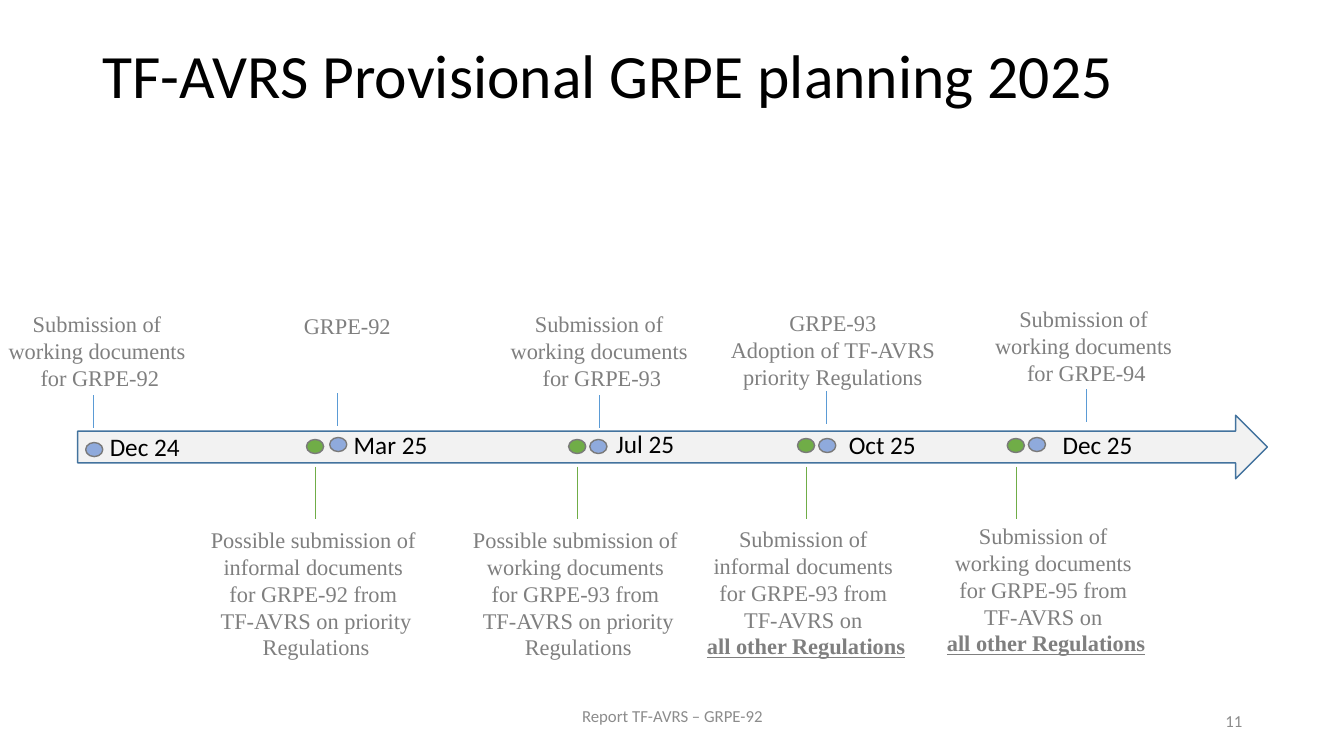
from typing import NamedTuple

from lxml.etree import SubElement
from pptx import Presentation
from pptx.dml.color import RGBColor
from pptx.enum.shapes import MSO_CONNECTOR, MSO_SHAPE as SHAPE
from pptx.enum.text import MSO_ANCHOR as ANCHOR, MSO_AUTO_SIZE as AUTO, PP_ALIGN as ALIGN
from pptx.oxml.ns import qn
from pptx.util import Pt

PX = 9144  # 100 px to the inch

BLACK = RGBColor(0x00, 0x00, 0x00)
TEXT_GREY = RGBColor(0x7F, 0x7F, 0x7F)
FOOTER_GREY = RGBColor(0x8C, 0x8C, 0x8C)
ARROW_FILL = RGBColor(0xF2, 0xF2, 0xF2)
ARROW_EDGE = RGBColor(0x43, 0x73, 0x9E)
DOT_EDGE = RGBColor(0x7A, 0x7A, 0x7A)
SESSION_DOT = RGBColor(0x8F, 0xAA, 0xDC)
SESSION_STEM = RGBColor(0x5B, 0x9B, 0xD5)
TASK_FORCE_GREEN = RGBColor(0x70, 0xAD, 0x47)

TITLE_FONT = {"name": "Calibri", "size": Pt(44)}
DATE_FONT = {"name": "Calibri", "size": Pt(18)}
NOTE_FONT = {"name": "Times New Roman", "size": Pt(16)}
FOOTER_FONT = {"name": "Calibri", "size": Pt(12)}
EMPHASIS = {"bold": True, "underline": True}

DOT_WIDTH, DOT_HEIGHT = 17, 14
SESSION_STEM_LENGTH = 33
TASK_STEM_TOP, TASK_STEM_BOTTOM = 463, 515
ALL_OTHER = "all other Regulations"


class Event(NamedTuple):
    dot: tuple  # left, top
    stem: tuple  # x, top
    note_box: tuple
    note: list
    date_box: tuple
    date: str


class Submission(NamedTuple):
    dot: tuple
    note_at: tuple
    note: list


def submission_for(session):
    return ["Submission of ", "working documents ", f"for {session}"]


def task_force_note(opening, kind, session, ending):
    return [opening, f"{kind} documents ", f"for {session} from ", *ending]


PRIORITY = ["TF-AVRS on priority", "Regulations"]
OTHERS = ["TF-AVRS on ", ALL_OTHER]

EVENTS = [
    Event((85, 439), (93, 392), (-3, 303, 204, 91), submission_for("GRPE-92"),
          (99, 423, 98, 40), "Dec 24"),
    Event((327, 434), (335, 390), (291, 305, 107, 37), ["GRPE-92"],
          (341, 421, 124, 40), "Mar 25"),
    Event((585, 436), (594, 392), (495, 303, 204, 91), submission_for("GRPE-93"),
          (601, 420, 124, 40), "Jul 25"),
    Event((812, 435), (820, 388), (695, 302, 262, 91),
          ["GRPE-93", "Adoption of TF-AVRS", "priority Regulations"],
          (832, 421, 98, 40), "Oct 25"),
    Event((1020, 434), (1077, 386), (946, 298, 263, 94), submission_for("GRPE-94"),
          (1044, 421, 98, 40), "Dec 25"),
]

SUBMISSIONS = [
    Submission((304, 436), (182, 517), task_force_note(
        "Possible submission of ", "informal", "GRPE-92", PRIORITY)),
    Submission((564, 436), (442, 517), task_force_note(
        "Possible submission of ", "working", "GRPE-93", PRIORITY)),
    Submission((791, 435), (668, 516), task_force_note(
        "Submission of ", "informal", "GRPE-93", OTHERS)),
    Submission((999, 435), (906, 513), task_force_note(
        "Submission of ", "working", "GRPE-95", OTHERS)),
]


def emu(lengths):
    return [length * PX for length in lengths]


def apply_format(target, values):
    for attribute, value in values.items():
        setattr(target, attribute, value)


def add_text(slide, box, lines, font, color, align=ALIGN.LEFT, spacing=1.0, **frame_format):
    """Write one paragraph per line; the ALL_OTHER line is emphasised."""
    frame = slide.shapes.add_textbox(*emu(box)).text_frame
    apply_format(frame, {"word_wrap": True, **frame_format})
    for index, line in enumerate(lines):
        paragraph = frame.add_paragraph() if index else frame.paragraphs[0]
        apply_format(paragraph, {"alignment": align, "line_spacing": spacing})
        run = paragraph.add_run()
        run.text = line
        apply_format(run.font, {**font, **(EMPHASIS if line == ALL_OTHER else {})})
        run.font.color.rgb = color


def add_note(slide, box, lines):
    add_text(slide, box, lines, NOTE_FONT, TEXT_GREY, ALIGN.CENTER,
             auto_size=AUTO.SHAPE_TO_FIT_TEXT)


def add_outlined(slide, kind, box, fill, edge):
    outlined = slide.shapes.add_shape(kind, *emu(box))
    outlined.shadow.inherit = False
    outlined.fill.solid()
    outlined.fill.fore_color.rgb = fill
    outlined.line.color.rgb = edge
    outlined.line.width = Pt(1)


def add_dot(slide, corner, fill):
    add_outlined(slide, SHAPE.OVAL, (*corner, DOT_WIDTH, DOT_HEIGHT), fill, DOT_EDGE)


def add_stem(slide, x, top, bottom, color):
    stem = slide.shapes.add_connector(MSO_CONNECTOR.STRAIGHT, *emu((x, top, x, bottom)))
    stem.line.color.rgb = color
    stem.line.width = Pt(0.5)
    SubElement(stem._element.spPr, qn("a:effectLst"))


def add_event(slide, event):
    x, top = event.stem
    add_stem(slide, x, top, top + SESSION_STEM_LENGTH, SESSION_STEM)
    add_dot(slide, event.dot, SESSION_DOT)
    add_note(slide, event.note_box, event.note)
    add_text(slide, event.date_box, [event.date], DATE_FONT, BLACK,
             auto_size=AUTO.SHAPE_TO_FIT_TEXT)


def add_submission(slide, submission):
    stem_x = submission.dot[0] + 9
    add_stem(slide, stem_x, TASK_STEM_TOP, TASK_STEM_BOTTOM, TASK_FORCE_GREEN)
    add_dot(slide, submission.dot, TASK_FORCE_GREEN)
    add_note(slide, (*submission.note_at, 263, 145), submission.note)


def main():
    deck = Presentation()
    apply_format(deck, {"slide_width": 1333 * PX, "slide_height": 750 * PX})
    slide = deck.slides.add_slide(deck.slide_layouts[6])

    add_text(slide, (92, 40, 1150, 145), ["TF-AVRS Provisional GRPE planning 2025"],
             TITLE_FONT, BLACK, spacing=0.9)
    add_outlined(slide, SHAPE.RIGHT_ARROW, (77, 412, 1180, 63), ARROW_FILL, ARROW_EDGE)
    for event in EVENTS:
        add_event(slide, event)
    for submission in SUBMISSIONS:
        add_submission(slide, submission)
    add_text(slide, (442, 695, 450, 40), ["Report TF-AVRS – GRPE-92"],
             FOOTER_FONT, FOOTER_GREY, ALIGN.CENTER)
    add_text(slide, (942, 695, 300, 40), ["11"], FOOTER_FONT, FOOTER_GREY,
             ALIGN.RIGHT, vertical_anchor=ANCHOR.MIDDLE)

    deck.save("out.pptx")


if __name__ == "__main__":
    main()
